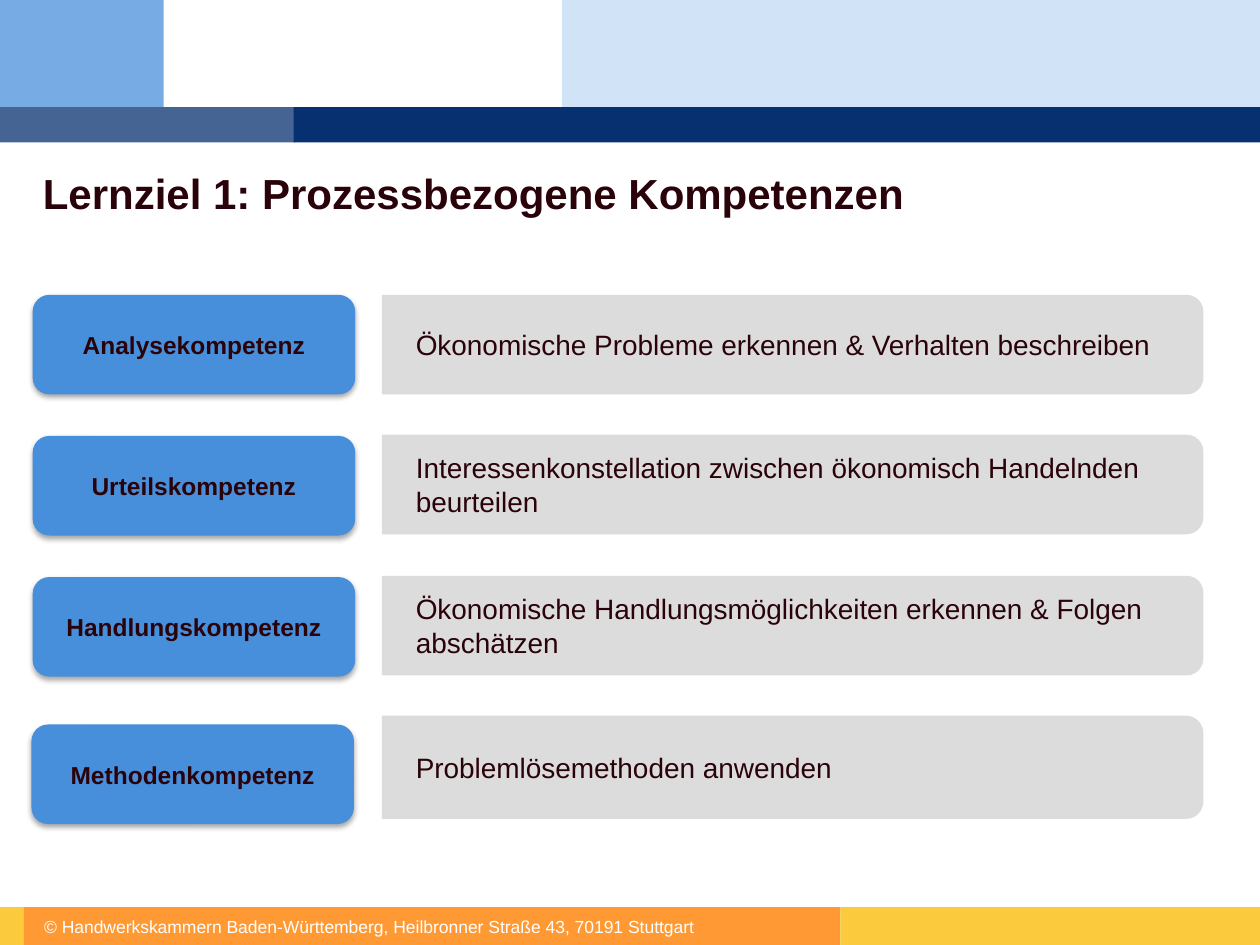
from typing import NamedTuple

from lxml import etree
from pptx import Presentation
from pptx.dml.color import RGBColor
from pptx.enum.shapes import MSO_SHAPE
from pptx.enum.text import MSO_ANCHOR, MSO_AUTO_SIZE, PP_ALIGN
from pptx.oxml.ns import qn
from pptx.util import Inches, Pt

RECT = MSO_SHAPE.RECTANGLE
ROUND = MSO_SHAPE.ROUNDED_RECTANGLE
ROUND_TOP = MSO_SHAPE.ROUND_2_SAME_RECTANGLE
TOP, MIDDLE = MSO_ANCHOR.TOP, MSO_ANCHOR.MIDDLE
LEFT, CENTER = PP_ALIGN.LEFT, PP_ALIGN.CENTER
FONT, INK, BLUE, GREY = "Arial", "2A030A", "488FDB", "D9D9D9"
BAR_LEFT, BAR_WIDTH = 3.03, 6.52
LABEL_WIDTH, LABEL_HEIGHT = 2.56, 0.79


class Band(NamedTuple):
    left: float
    top: float
    width: float
    height: float
    color: str


class Competence(NamedTuple):
    name: str
    goal: str
    label_left: float
    label_top: float
    bar_top: float
    bar_height: float


BANDS = [
    Band(4.46, 0, 5.54, 0.85, "D1E3F6"),
    Band(0, 0, 1.3, 0.85, "76ABE4"),
    Band(0, 0.85, 2.34, 0.28, "456494"),
    Band(2.33, 0.85, 7.67, 0.28, "073070"),
    Band(0, 7.2, 0.19, 0.3, "FBCB3D"),
    Band(0.19, 7.2, 6.48, 0.3, "FF9933"),
    Band(6.67, 7.2, 3.33, 0.3, "FBCB3D"),
]
COMPETENCES = [
    Competence("Analysekompetenz",
               "Ökonomische Probleme erkennen & Verhalten beschreiben",
               0.26, 2.34, 2.34, 0.79),
    Competence("Urteilskompetenz",
               "Interessenkonstellation zwischen ökonomisch Handelnden beurteilen",
               0.26, 3.46, 3.45, 0.79),
    Competence("Handlungskompetenz",
               "Ökonomische Handlungsmöglichkeiten erkennen & Folgen abschätzen",
               0.26, 4.58, 4.57, 0.79),
    Competence("Methodenkompetenz", "Problemlösemethoden anwenden",
               0.25, 5.75, 5.68, 0.82),
]


def rgb(color: str) -> RGBColor:
    return RGBColor.from_string(color)


def add_block(s, kind, left: float, top: float, width: float, height: float, color: str):
    sp = s.shapes.add_shape(kind, Inches(left), Inches(top), Inches(width), Inches(height))
    sp.shadow.inherit = False
    sp.fill.solid()
    sp.fill.fore_color.rgb = rgb(color)
    sp.line.fill.background()
    return sp


def add_textbox(s, left: float, top: float, width: float, height: float):
    return s.shapes.add_textbox(Inches(left), Inches(top), Inches(width), Inches(height))


def set_text(sp, text: str, size: float, color: str = INK, bold: bool = False,
             align=LEFT, anchor=MIDDLE, inset_x: float = 0, inset_y: float = 0) -> None:
    tf = sp.text_frame
    tf.word_wrap = True
    tf.auto_size = MSO_AUTO_SIZE.NONE
    tf.vertical_anchor = anchor
    tf.margin_left = tf.margin_right = Inches(inset_x)
    tf.margin_top = tf.margin_bottom = Inches(inset_y)
    p = tf.paragraphs[0]
    p.alignment = align
    r = p.add_run()
    r.text = text
    r.font.name, r.font.size, r.font.bold = FONT, Pt(size), bold
    r.font.color.rgb = rgb(color)


def add_shadow(sp) -> None:
    effects = sp.element.spPr.find(qn("a:effectLst"))
    shadow = etree.SubElement(effects, qn("a:outerShdw"), blurRad=str(Pt(3.1)),
                              dist=str(Pt(1.8)), dir="5400000", rotWithShape="0")
    color = etree.SubElement(shadow, qn("a:srgbClr"), val="000000")
    etree.SubElement(color, qn("a:alpha"), val="35000")


def add_competence(s, c: Competence) -> None:
    # Bar turned by 90 degrees, so its rounded corners face right
    center_x = BAR_LEFT + BAR_WIDTH / 2
    center_y = c.bar_top + c.bar_height / 2
    bar = add_block(s, ROUND_TOP, center_x - c.bar_height / 2, center_y - BAR_WIDTH / 2,
                    c.bar_height, BAR_WIDTH, GREY)
    bar.rotation = 90
    fill = bar.element.spPr.find(qn("a:solidFill"))
    etree.SubElement(fill[0], qn("a:alpha"), val="90000")
    goal = add_textbox(s, BAR_LEFT, c.bar_top + 0.04, 6.48, c.bar_height - 0.08)
    set_text(goal, c.goal, 16, inset_x=0.27, inset_y=0.14)

    # Label on the left
    label = add_block(s, ROUND, c.label_left, c.label_top, LABEL_WIDTH, LABEL_HEIGHT, BLUE)
    add_shadow(label)
    set_text(label, c.name, 14, bold=True, align=CENTER, inset_x=0.05, inset_y=0.03)


def main() -> None:
    prs = Presentation()
    prs.slide_width, prs.slide_height = Inches(10), Inches(7.5)
    s = prs.slides.add_slide(prs.slide_layouts[5])

    # Header and footer bands
    for band in BANDS:
        add_block(s, RECT, *band)
    footer = add_textbox(s, 0.35, 7.2, 6.31, 0.3)
    set_text(footer, "© Handwerkskammern Baden-Württemberg, Heilbronner Straße 43, "
                     "70191 Stuttgart", 10, "FFFFFF")

    # Title
    title = s.shapes.title
    title.left, title.top = Inches(0.34), Inches(1.33)
    title.width, title.height = Inches(8.84), Inches(0.75)
    set_text(title, "Lernziel 1: Prozessbezogene Kompetenzen", 24, bold=True, anchor=TOP)

    # Competence rows
    for competence in COMPETENCES:
        add_competence(s, competence)

    prs.save("out.pptx")


if __name__ == "__main__":
    main()
